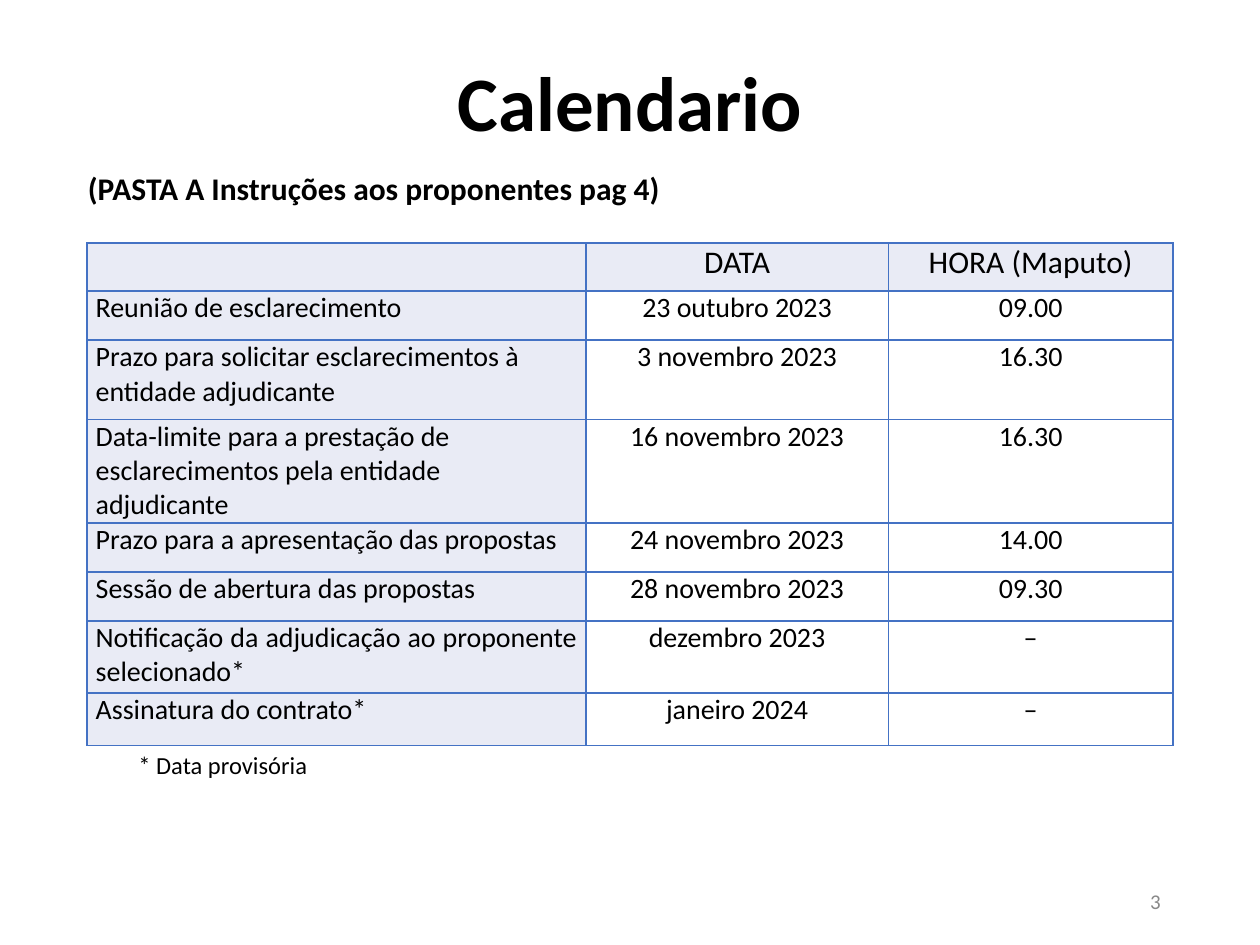
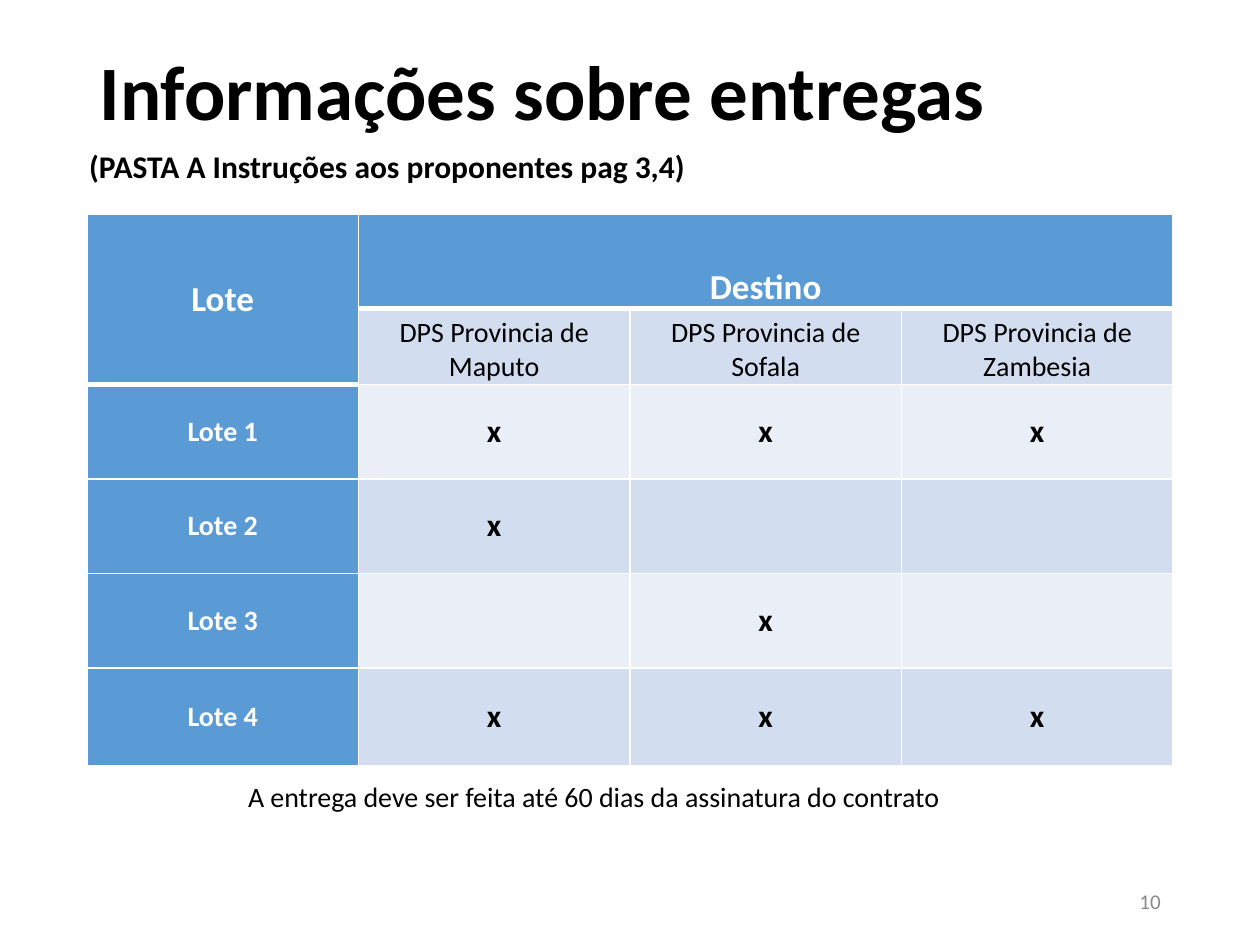
from dataclasses import dataclass

from lxml.etree import SubElement
from pptx import Presentation
from pptx.dml.color import RGBColor
from pptx.enum.text import MSO_ANCHOR, MSO_AUTO_SIZE, PP_ALIGN
from pptx.oxml.ns import qn
from pptx.util import Inches, Pt


@dataclass(frozen=True)
class Theme:
    font: str = "Calibri"
    text: str = "000000"
    white: str = "FFFFFF"
    muted: str = "898989"
    rule: str = "4472C4"
    label: str = "E9EBF5"
    accent: str = "5B9BD5"
    band_dark: str = "D2DEEF"
    band_light: str = "EAEFF7"
    title_size: int = 44
    head_size: int = 20
    lead_size: int = 18
    body_size: int = 16
    note_size: int = 14
    number_size: int = 12


THEME = Theme()
COLUMNS, ROWS = 10, 7.5
MARGIN, CONTENT = 0.69, 8.62


def write(tf, text, size=THEME.body_size, color=THEME.text, bold=False,
          align=PP_ALIGN.LEFT, anchor=MSO_ANCHOR.TOP, spacing=None):
    tf.word_wrap = True
    tf.vertical_anchor = anchor
    p = tf.paragraphs[0]
    p.alignment = align
    if spacing:
        p.line_spacing = spacing
    r = p.add_run()
    r.text = text
    r.font.name = THEME.font
    r.font.size = Pt(size)
    r.font.bold = bold
    r.font.color.rgb = RGBColor.from_string(color)


def draw_borders(cell, color, **widths):
    """Widths are points, keyed by side: L, R, T, B."""
    tc_pr = cell._tc.get_or_add_tcPr()
    for side, width in widths.items():
        line = SubElement(tc_pr, qn(f"a:ln{side}"), w=str(Pt(width)))
        fill = SubElement(line, qn("a:solidFill"))
        SubElement(fill, qn("a:srgbClr"), val=color)


class Deck:
    def __init__(self):
        self.prs = Presentation()
        self.prs.slide_width = Inches(10)
        self.prs.slide_height = Inches(7.5)
        self.s = None

    def x(self, columns):
        return round(self.prs.slide_width * columns / COLUMNS)

    def y(self, rows):
        return round(self.prs.slide_height * rows / ROWS)

    def box(self, left, top, width, height):
        return self.x(left), self.y(top), self.x(width), self.y(height)

    def slide(self, title, number, title_height, align=PP_ALIGN.LEFT):
        self.s = self.prs.slides.add_slide(self.prs.slide_layouts[5])
        sp = self.s.shapes.title
        sp.left, sp.top, sp.width, sp.height = self.box(MARGIN, 0.4, CONTENT, title_height)
        sp.text_frame.auto_size = MSO_AUTO_SIZE.NONE
        write(sp.text_frame, title, size=THEME.title_size, bold=True, align=align,
              anchor=MSO_ANCHOR.MIDDLE, spacing=0.9)
        self.text(number, 7.06, 6.95, 2.25, 0.4, size=THEME.number_size, color=THEME.muted,
                  align=PP_ALIGN.RIGHT, anchor=MSO_ANCHOR.MIDDLE)

    def text(self, text, left, top, width, height, **style):
        sp = self.s.shapes.add_textbox(*self.box(left, top, width, height))
        write(sp.text_frame, text, **style)

    def table(self, top, widths, heights):
        frame = self.s.shapes.add_table(
            len(heights), len(widths), *self.box(MARGIN, top, CONTENT, sum(heights)))
        table = frame.table
        table.first_row = table.horz_banding = False
        for column, width in zip(table.columns, widths):
            column.width = self.x(width)
        for row, height in zip(table.rows, heights):
            row.height = self.y(height)
        return table

    def cell(self, table, row, column, text, fill, border, top=1, bottom=1, **style):
        cell = table.cell(row, column)
        cell.margin_left = cell.margin_right = Inches(0.07)
        cell.margin_top = cell.margin_bottom = 0
        draw_borders(cell, border, L=1, R=1, T=top, B=bottom)
        cell.fill.solid()
        cell.fill.fore_color.rgb = RGBColor.from_string(fill)
        if text:
            cell.vertical_anchor = style.pop("anchor", MSO_ANCHOR.TOP)
            write_cell(cell, text, **style)


def write_cell(cell, text, **style):
    anchor = cell.vertical_anchor
    write(cell.text_frame, text, **style)
    cell.vertical_anchor = anchor


def calendar_slide(deck):
    events = [
        ("", "DATA", "HORA (Maputo)"),
        ("Reunião de esclarecimento", "23 outubro 2023", "09.00"),
        ("Prazo para solicitar esclarecimentos à entidade adjudicante",
         "3 novembro 2023", "16.30"),
        ("Data-limite para a prestação de esclarecimentos pela entidade adjudicante",
         "16 novembro 2023", "16.30"),
        ("Prazo para a apresentação das propostas", "24 novembro 2023", "14.00"),
        ("Sessão de abertura das propostas", "28 novembro 2023", "09.30"),
        ("Notificação da adjudicação ao proponente selecionado*", "dezembro 2023", "–"),
        ("Assinatura do contrato*", "janeiro 2024", "–"),
    ]
    left_aligned_rows = (2, 3)
    deck.slide("Calendario", "3", 0.89, align=PP_ALIGN.CENTER)
    table = deck.table(1.93, [3.96, 2.4, 2.26],
                       [0.38, 0.39, 0.63, 0.82, 0.39, 0.39, 0.57, 0.42])
    for i, event in enumerate(events):
        for j, text in enumerate(event):
            if j:
                align = PP_ALIGN.CENTER
            else:
                align = PP_ALIGN.LEFT if i in left_aligned_rows else PP_ALIGN.JUSTIFY
            deck.cell(table, i, j, text, border=THEME.rule, align=align,
                      fill=THEME.white if i and j else THEME.label,
                      size=THEME.body_size if i else THEME.lead_size)
    deck.text("* Data provisória", 1, 5.9, 3.6, 0.34, size=THEME.note_size)
    deck.text("(PASTA A Instruções aos proponentes pag 4)", 0.6, 1.29, 5.76, 0.4,
              size=THEME.lead_size, bold=True)


def delivery_slide(deck):
    provinces = ["Maputo", "Sofala", "Zambesia"]
    lots = ["xxx", "x--", "-x-", "xxx"]
    grid = [["Lote", "Destino", "", ""],
            ["", *(f"DPS Provincia de {name}" for name in provinces)]]
    for number, marks in enumerate(lots, 1):
        grid.append([f"Lote {number}", *marks.replace("-", " ")])

    def border_below(row, column):
        return 3 if row == 0 or (row, column) == (1, 0) else 1

    def cell_style(row, column):
        if row == 0 or column == 0:
            return dict(fill=THEME.accent, color=THEME.white, bold=True,
                        size=THEME.body_size if row else THEME.head_size,
                        anchor=MSO_ANCHOR.MIDDLE if column == 0 else MSO_ANCHOR.BOTTOM)
        if row == 1:
            return dict(fill=THEME.band_dark, anchor=MSO_ANCHOR.BOTTOM)
        return dict(fill=THEME.band_dark if row % 2 else THEME.band_light, bold=True,
                    size=THEME.lead_size, anchor=MSO_ANCHOR.MIDDLE)

    deck.slide("Informações sobre entregas", "10", 0.72)
    table = deck.table(1.7, [CONTENT / 4] * 4, [0.75, 0.6, 0.75, 0.75, 0.75, 0.78])
    table.cell(0, 0).merge(table.cell(1, 0))
    table.cell(0, 1).merge(table.cell(0, 3))
    for i, row in enumerate(grid):
        for j, text in enumerate(row):
            deck.cell(table, i, j, text.strip(), border=THEME.white, align=PP_ALIGN.CENTER,
                      top=border_below(i - 1, j), bottom=border_below(i, j),
                      **cell_style(i, j))
    deck.text("A entrega deve ser feita até 60 dias da assinatura do contrato",
              1.87, 6.14, 6.11, 0.37)
    deck.text("(PASTA A Instruções aos proponentes pag 3,4)", 0.61, 1.12, 7.04, 0.4,
              size=THEME.lead_size, bold=True)


def main():
    deck = Deck()
    calendar_slide(deck)
    delivery_slide(deck)
    deck.prs.save("out.pptx")


if __name__ == "__main__":
    main()
